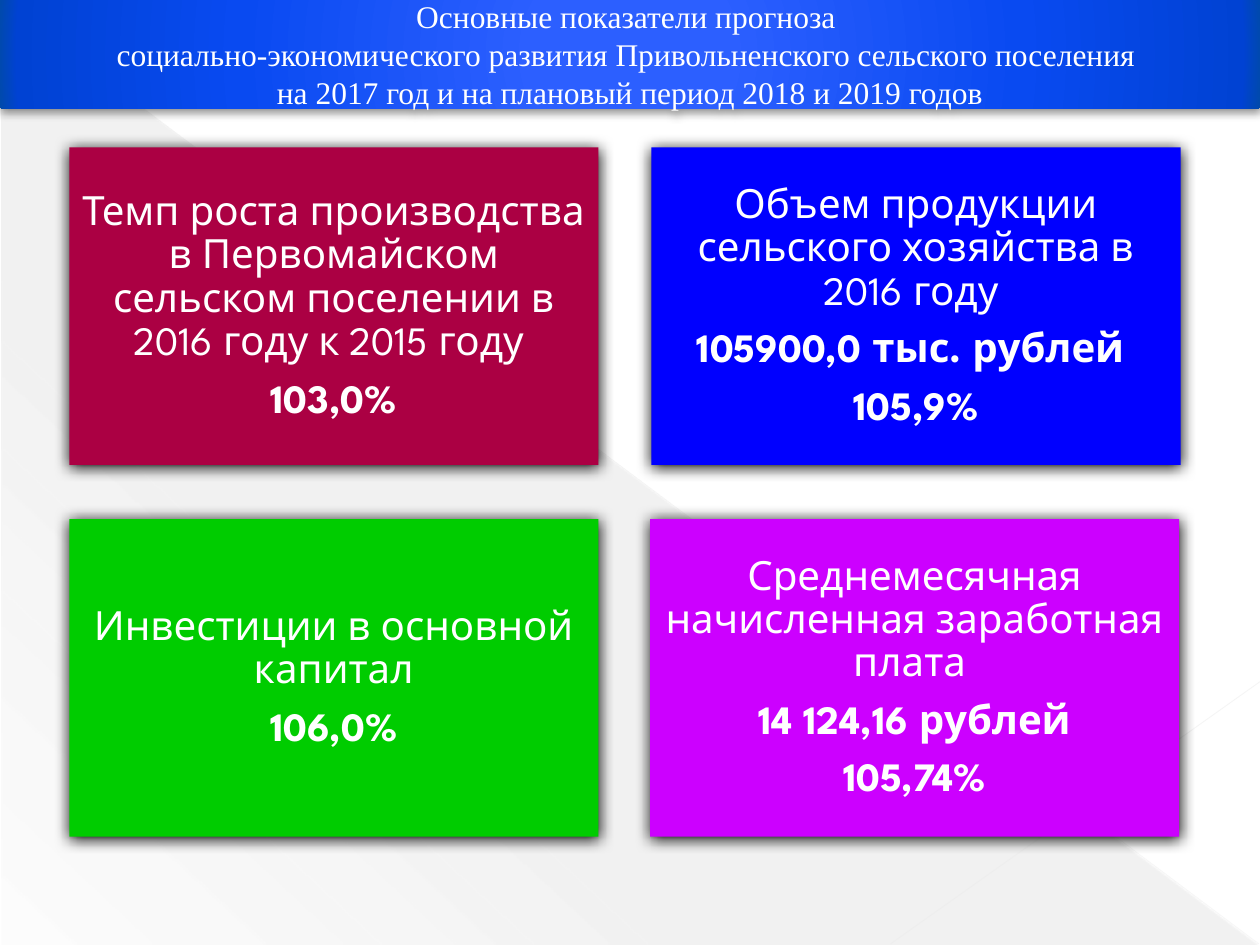
"""Build a slide of four forecast indicators for a rural settlement."""
from pptx import Presentation
from pptx.dml.color import RGBColor
from pptx.enum.shapes import MSO_CONNECTOR, MSO_SHAPE
from pptx.enum.text import MSO_ANCHOR, MSO_AUTO_SIZE, PP_ALIGN
from pptx.oxml import parse_xml
from pptx.oxml.ns import nsdecls, qn
from pptx.util import Inches, Pt

rgb = RGBColor.from_string


def add_gradient(shape, stops, direction):
    shape.fill.background()
    plain = shape._element.spPr.find(qn("a:noFill"))
    marks = "".join(
        f'<a:gs pos="{place * 1000}"><a:srgbClr val="{color}">'
        f'<a:alpha val="{alpha * 1000}"/></a:srgbClr></a:gs>'
        for place, color, alpha in stops)
    plain.getparent().replace(plain, parse_xml(
        f'<a:gradFill {nsdecls("a")} rotWithShape="1">'
        f'<a:gsLst>{marks}</a:gsLst>{direction}</a:gradFill>'))


def add_shadow(shape, alpha, blur, distance):
    shape.shadow.inherit = False
    shape._element.spPr.find(qn("a:effectLst")).append(parse_xml(
        f'<a:outerShdw {nsdecls("a")} blurRad="{Pt(blur)}" dist="{Pt(distance)}" '
        f'dir="5400000" rotWithShape="0"><a:srgbClr val="000000">'
        f'<a:alpha val="{alpha * 1000}"/></a:srgbClr></a:outerShdw>'))


deck = Presentation()
deck.slide_width, deck.slide_height = Inches(10), Inches(7.5)
page = deck.slides.add_slide(deck.slide_layouts[5])
shapes = page.shapes

triangle = shapes.add_shape(MSO_SHAPE.RIGHT_TRIANGLE, Inches(0.01), Inches(0.02),
                            Inches(9.98), Inches(7.48))
triangle.shadow.inherit = False
triangle.line.fill.background()
add_gradient(triangle, [(0, "666666", 10), (70, "666666", 8), (100, "666666", 1)],
             '<a:lin ang="7980000" scaled="1"/>')

for x1, y1, x2, y2, color, width, alpha in [
        (0, 0.01, 9.99, 7.49, "E8E8E8", 0.39, 35),
        (10, 5.41, 7.07, 7.49, "EAEAEA", 0.47, 45)]:
    line = shapes.add_connector(MSO_CONNECTOR.STRAIGHT, Inches(x1), Inches(y1),
                                Inches(x2), Inches(y2))
    line.line.width = Pt(width)
    line.line.color.rgb = rgb(color)
    properties = line._element.spPr
    properties.find(".//" + qn("a:srgbClr")).append(
        parse_xml(f'<a:alpha {nsdecls("a")} val="{alpha * 1000}"/>'))
    properties.append(parse_xml(f'<a:effectLst {nsdecls("a")}/>'))

title = shapes.title
title._element.getparent().append(title._element)
title.left, title.top = Inches(0), Inches(0)
title.width, title.height = Inches(10), Inches(0.86)
add_gradient(title, [(0, "2D60FF", 100), (15, "2C5FFF", 100), (62, "094AF1", 100),
                     (97, "0042D3", 100), (100, "004AAB", 100)],
             '<a:path path="circle">'
             '<a:fillToRect l="50000" t="50000" r="50000" b="50000"/></a:path>')
add_shadow(title, 43, 5, 2)
frame = title.text_frame
frame.auto_size = MSO_AUTO_SIZE.NONE
frame.vertical_anchor = MSO_ANCHOR.MIDDLE
for index, text in enumerate([
        "Основные показатели прогноза ",
        "социально-экономического развития Привольненского сельского поселения ",
        "на 2017 год и на плановый период 2018 и 2019 годов"]):
    para = frame.add_paragraph() if index else frame.paragraphs[0]
    para.alignment = PP_ALIGN.CENTER
    span = para.add_run()
    span.text = text
    span.font.size = Pt(18)
    span.font.name = "Times New Roman"
    span.font.color.rgb = rgb("FFFFFF")

cards = [
    (0.55, 1.17, "AB0043",
     ["Темп роста производства в Первомайском сельском поселении в 2016 году к 2015 году ",
      "103,0%"]),
    (5.17, 1.17, "0000FF",
     ["Объем продукции сельского хозяйства в 2016 году ",
      "105900,0 тыс. рублей ", "105,9%"]),
    (0.55, 4.12, "00CC00", ["Инвестиции в основной капитал", "106,0%"]),
    (5.16, 4.12, "CC00FF",
     ["Среднемесячная начисленная заработная плата ",
      "14 124,16 рублей", "105,74%"]),
]
for left, top, color, texts in cards:
    card = shapes.add_shape(MSO_SHAPE.RECTANGLE, Inches(left), Inches(top),
                            Inches(4.2), Inches(2.52))
    card.fill.solid()
    card.fill.fore_color.rgb = rgb(color)
    card.line.fill.background()
    add_shadow(card, 100, 8.5, 1)
    frame = card.text_frame
    frame.word_wrap = True
    frame.vertical_anchor = MSO_ANCHOR.MIDDLE
    frame.margin_left = frame.margin_right = Inches(0.1)
    frame.margin_top = frame.margin_bottom = Inches(0.1)
    for index, text in enumerate(texts):
        para = frame.add_paragraph() if index else frame.paragraphs[0]
        para.alignment = PP_ALIGN.CENTER
        para.line_spacing = 0.9
        para.space_after = Pt(8)
        span = para.add_run()
        span.text = text
        span.font.size = Pt(23)
        span.font.name = "League Spartan"
        span.font.bold = index > 0
        span.font.color.rgb = rgb("FFFFFF")

deck.save("out.pptx")
